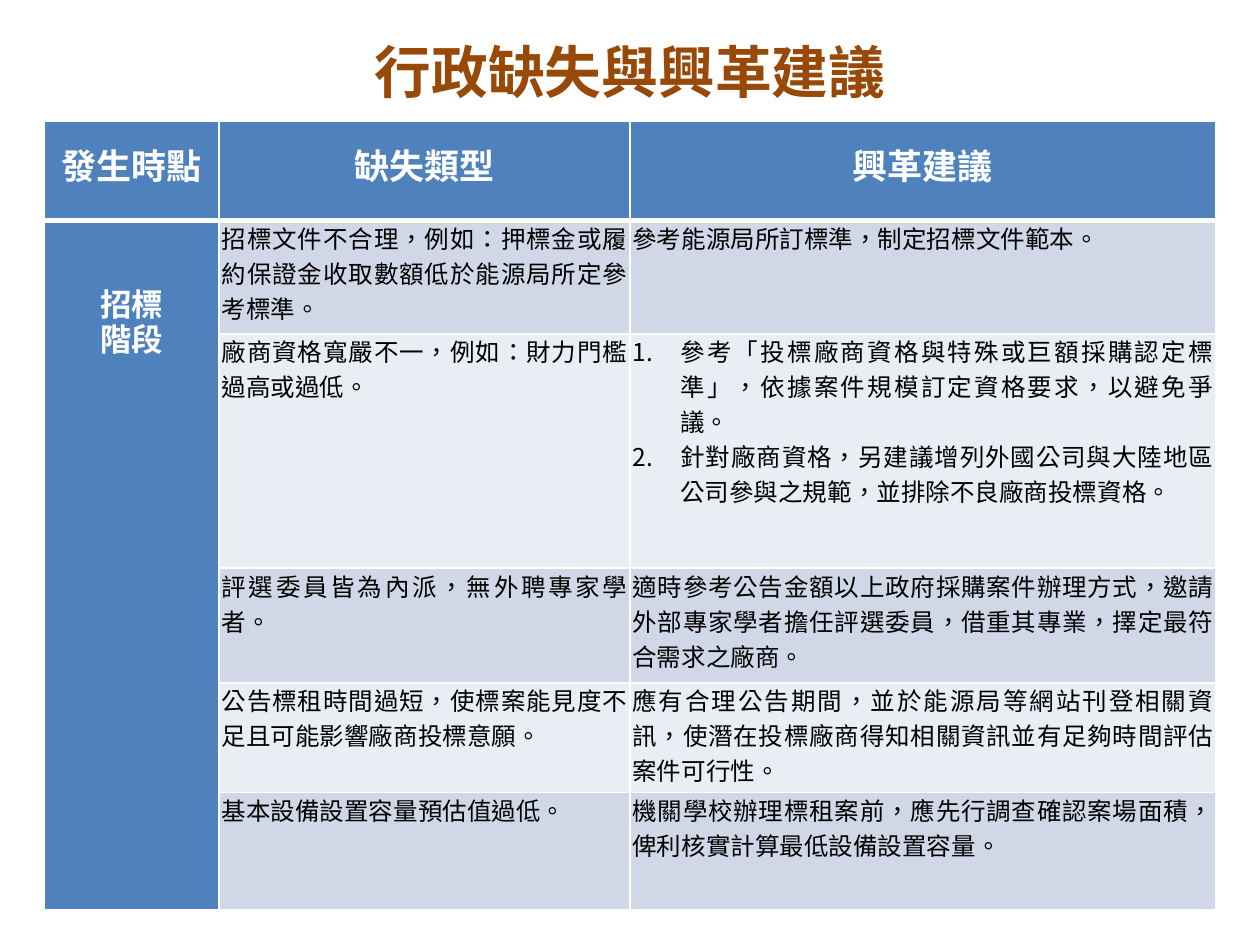
from lxml import etree
from pptx import Presentation
from pptx import util as u
from pptx.dml.color import RGBColor
from pptx.enum import text
from pptx.oxml import ns

FONT = "Noto Sans CJK SC"
COLORS = {"title": "984807", "head": "4F81BD", "odd": "D0D8E8",
          "even": "E9EDF4", "white": "FFFFFF", "body": "000000"}
WIDTH, HEIGHT = u.Inches(10), u.Inches(7.5)
COLUMNS = [1.39, 3.26, 4.65]
ROWS = [0.79, 0.9, 1.86, 0.91, 0.87, 0.93]
HEADINGS = ["發生時點", "缺失類型", "興革建議"]
STAGE = ["招標", "階段"]
FINDINGS = [
    ("招標文件不合理，例如：押標金或履約保證金收取數額低於能源局所定參考標準。",
     ["參考能源局所訂標準，制定招標文件範本。"]),
    ("廠商資格寬嚴不一，例如：財力門檻過高或過低。",
     ["參考「投標廠商資格與特殊或巨額採購認定標準」，依據案件規模訂定資格要求，以避免爭議。",
      "針對廠商資格，另建議增列外國公司與大陸地區公司參與之規範，並排除不良廠商投標資格。"]),
    ("評選委員皆為內派，無外聘專家學者。",
     ["適時參考公告金額以上政府採購案件辦理方式，邀請外部專家學者擔任評選委員，借重其專業，擇定最符合需求之廠商。"]),
    ("公告標租時間過短，使標案能見度不足且可能影響廠商投標意願。",
     ["應有合理公告期間，並於能源局等網站刊登相關資訊，使潛在投標廠商得知相關資訊並有足夠時間評估案件可行性。"]),
    ("基本設備設置容量預估值過低。",
     ["機關學校辦理標租案前，應先行調查確認案場面積，俾利核實計算最低設備設置容量。"]),
]


def rgb(key):
    return RGBColor.from_string(COLORS[key])


def add_run(paragraph, wording, size, color, bold):
    run = paragraph.add_run()
    run.text = wording
    run.font.size = u.Pt(size)
    run.font.bold = bold
    run.font.color.rgb = rgb(color)
    run.font.name = FONT
    properties = run.font._element
    properties.set("lang", "zh-TW")
    etree.SubElement(properties, ns.qn("a:ea"), typeface=FONT)


def number_paragraph(paragraph):
    properties = paragraph._p.get_or_add_pPr()
    properties.set("marL", str(u.Inches(0.38)))
    properties.set("indent", str(-u.Inches(0.38)))
    etree.SubElement(properties, ns.qn("a:buFont"), typeface="+mj-lt")
    etree.SubElement(properties, ns.qn("a:buAutoNum"), type="arabicPeriod")


def write_cell(cell, lines, size, color, bold, align, spacing=20):
    for index, line in enumerate(lines):
        frame = cell.text_frame
        paragraph = frame.add_paragraph() if index else frame.paragraphs[0]
        if align == text.PP_ALIGN.JUSTIFY and len(lines) > 1:
            number_paragraph(paragraph)
        paragraph._p.get_or_add_pPr().set("hangingPunct", "0")
        paragraph.alignment = align
        paragraph.line_spacing = u.Pt(spacing)
        add_run(paragraph, line, size, color, bold)


def style_cell(cell, fill, top=1, bottom=1):
    cell.margin_left = cell.margin_right = u.Inches(0.02)
    cell.margin_top = cell.margin_bottom = 0
    properties = cell._tc.get_or_add_tcPr()
    for side, points in zip("LRTB", (1, 1, top, bottom)):
        line = etree.SubElement(properties, ns.qn(f"a:ln{side}"), w=str(u.Pt(points)))
        paint = etree.SubElement(line, ns.qn("a:solidFill"))
        etree.SubElement(paint, ns.qn("a:srgbClr"), val=COLORS["white"])
    cell.fill.solid()
    cell.fill.fore_color.rgb = rgb(fill)


def place_title(slide, left, top, width, height):
    title = slide.shapes.title
    title.left, title.top, title.width, title.height = left, top, width, height
    frame = title.text_frame
    frame.vertical_anchor = text.MSO_ANCHOR.MIDDLE
    frame.auto_size = text.MSO_AUTO_SIZE.NONE
    paragraph = frame.paragraphs[0]
    paragraph.alignment = text.PP_ALIGN.CENTER
    add_run(paragraph, "行政缺失與興革建議", 32.4, "title", True)


def place_findings(slide, left, top, width, height):
    table = slide.shapes.add_table(len(ROWS), len(COLUMNS), left, top, width, height).table
    for column, share in zip(table.columns, COLUMNS):
        column.width = int(width * share / sum(COLUMNS))
    for row, share in zip(table.rows, ROWS):
        row.height = int(height * share / sum(ROWS))

    center, justify = text.PP_ALIGN.CENTER, text.PP_ALIGN.JUSTIFY
    for column, heading in enumerate(HEADINGS):
        cell = table.cell(0, column)
        style_cell(cell, "head", bottom=3)
        cell.vertical_anchor = text.MSO_ANCHOR.MIDDLE
        write_cell(cell, [heading], 20, "white", True, center, 22)

    for row, (defect, advice) in enumerate(FINDINGS, 1):
        band = "odd" if row % 2 else "even"
        top_line = 3 if row == 1 else 1
        for column, fill in enumerate(("head", band, band)):
            style_cell(table.cell(row, column), fill, top=top_line)
        write_cell(table.cell(row, 1), [defect], 14, "body", False, justify)
        write_cell(table.cell(row, 2), advice, 14, "body", False, justify)

    stage = table.cell(1, 0)
    stage.merge(table.cell(len(FINDINGS), 0))
    stage.margin_top = u.Pt(40)
    write_cell(stage, STAGE, 18, "white", True, center)


def main():
    deck = Presentation()
    deck.slide_width, deck.slide_height = WIDTH, HEIGHT
    slide = deck.slides.add_slide(deck.slide_layouts[5])
    place_title(slide, int(WIDTH * 0.05), int(HEIGHT * 0.03), int(WIDTH * 0.9), int(HEIGHT * 0.09))
    place_findings(slide, u.Inches(0.35), u.Inches(0.96), u.Inches(sum(COLUMNS)), u.Inches(sum(ROWS)))
    deck.save("out.pptx")


if __name__ == "__main__":
    main()
